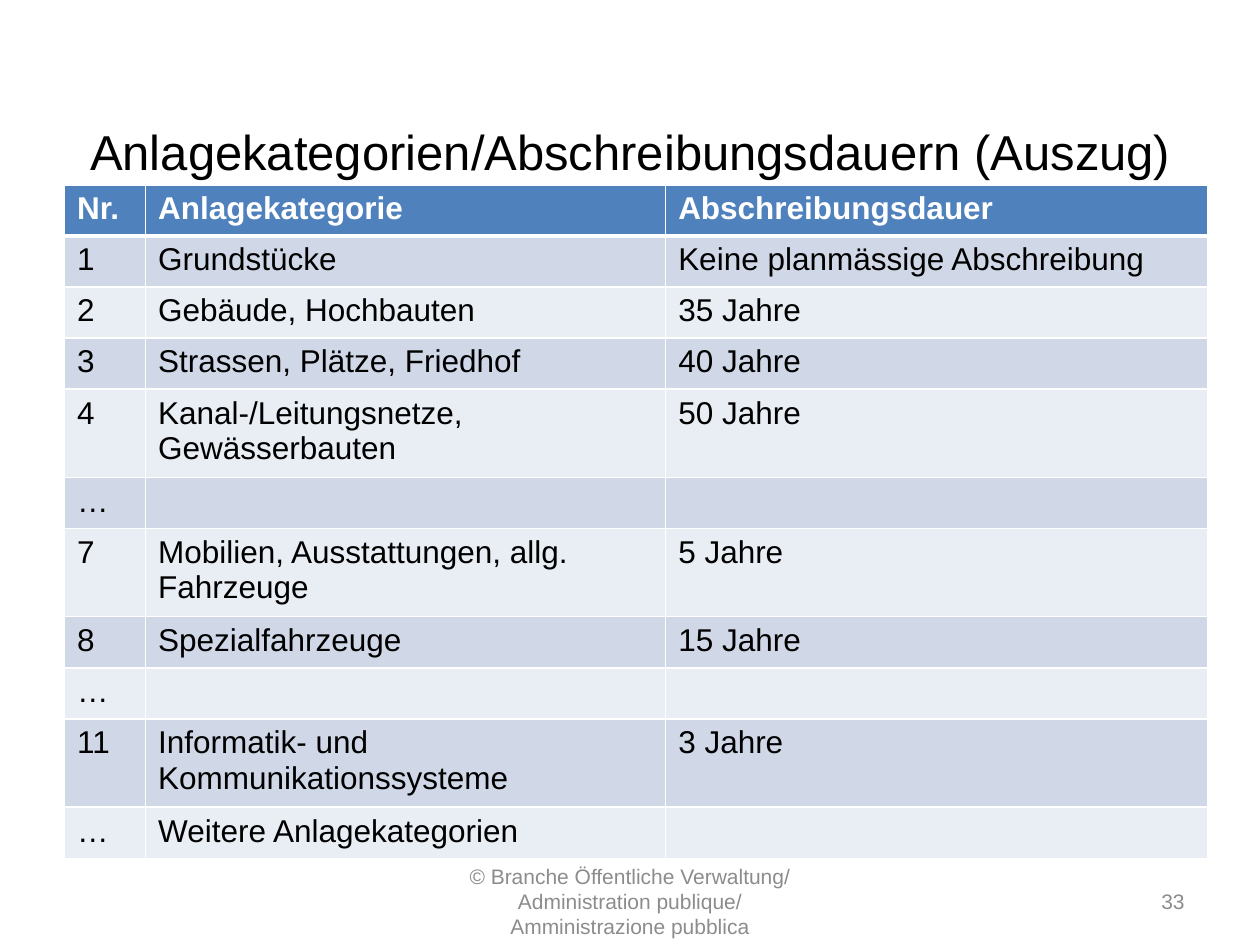
from pptx import Presentation
from pptx.dml.color import RGBColor
from pptx.enum.text import MSO_ANCHOR, PP_ALIGN
from pptx.oxml.ns import qn
from pptx.util import Pt
from lxml.etree import SubElement

FONT = "Arial"
BLACK = RGBColor(0x00, 0x00, 0x00)
WHITE = RGBColor(0xFF, 0xFF, 0xFF)
GREY = RGBColor(0x8C, 0x8C, 0x8C)
HEADER_BLUE = RGBColor(0x4F, 0x81, 0xBD)
BAND_DARK = RGBColor(0xD0, 0xD8, 0xE8)
BAND_LIGHT = RGBColor(0xE9, 0xED, 0xF4)

COLUMN_WIDTHS = [46.3, 297.2, 309.6]
ROW_HEIGHT = 29.2
ROWS = [
    ("Nr.", "Anlagekategorie", "Abschreibungsdauer"),
    ("1", "Grundstücke", "Keine planmässige Abschreibung"),
    ("2", "Gebäude, Hochbauten", "35 Jahre"),
    ("3", "Strassen, Plätze, Friedhof", "40 Jahre"),
    ("4", "Kanal-/Leitungsnetze, Gewässerbauten", "50 Jahre"),
    ("…", "", ""),
    ("7", "Mobilien, Ausstattungen, allg. Fahrzeuge", "5 Jahre"),
    ("8", "Spezialfahrzeuge", "15 Jahre"),
    ("…", "", ""),
    ("11", "Informatik- und Kommunikationssysteme", "3 Jahre"),
    ("…", "Weitere Anlagekategorien", ""),
]


def format_runs(paragraph, size, color, bold=False):
    for run in paragraph.runs:
        run.font.name = FONT
        run.font.size = Pt(size)
        run.font.bold = bold
        run.font.color.rgb = color


def add_text(slide, text, left, top, width, height, size, color, alignment):
    text_frame = slide.shapes.add_textbox(
        Pt(left), Pt(top), Pt(width), Pt(height)).text_frame
    text_frame.word_wrap = True
    text_frame.vertical_anchor = MSO_ANCHOR.MIDDLE
    text_frame.text = text
    paragraph = text_frame.paragraphs[0]
    paragraph.alignment = alignment
    format_runs(paragraph, size, color)


def set_borders(cell, top, bottom):
    """Draw white cell borders; call before the fill is set."""
    properties = cell._tc.get_or_add_tcPr()
    for side, width in (("L", 1), ("R", 1), ("T", top), ("B", bottom)):
        line = SubElement(properties, qn(f"a:ln{side}"), w=str(Pt(width)))
        fill = SubElement(line, qn("a:solidFill"))
        SubElement(fill, qn("a:srgbClr"), val=str(WHITE))


def add_category_table(slide, left, top):
    table = slide.shapes.add_table(
        len(ROWS), len(COLUMN_WIDTHS), Pt(left), Pt(top),
        Pt(sum(COLUMN_WIDTHS)), Pt(ROW_HEIGHT * len(ROWS))).table
    for column, width in zip(table.columns, COLUMN_WIDTHS):
        column.width = Pt(width)
    for row_index, texts in enumerate(ROWS):
        table.rows[row_index].height = Pt(ROW_HEIGHT)
        is_header = row_index == 0
        band = BAND_DARK if row_index % 2 else BAND_LIGHT
        for column_index, text in enumerate(texts):
            cell = table.cell(row_index, column_index)
            set_borders(cell, top=3 if row_index == 1 else 1,
                        bottom=3 if is_header else 1)
            cell.fill.solid()
            cell.fill.fore_color.rgb = HEADER_BLUE if is_header else band
            if text:
                cell.text_frame.text = text
                format_runs(cell.text_frame.paragraphs[0], 18,
                            WHITE if is_header else BLACK, is_header)


def main():
    presentation = Presentation()
    presentation.slide_width = Pt(720)
    presentation.slide_height = Pt(540)
    slide = presentation.slides.add_slide(presentation.slide_layouts[6])

    # Title
    add_text(slide, "Anlagekategorien/Abschreibungsdauern (Auszug)",
             36, 60.5, 648, 51, 28, BLACK, PP_ALIGN.CENTER)

    # Asset categories and depreciation periods
    add_category_table(slide, 36.9, 105.6)

    # Page number and footer
    add_text(slide, "33", 516, 500.5, 168, 28.75, 12, GREY, PP_ALIGN.RIGHT)
    add_text(slide, "© Branche Öffentliche Verwaltung/ Administration publique/ "
             "Amministrazione pubblica",
             246, 500.5, 228, 28.75, 12, GREY, PP_ALIGN.CENTER)

    presentation.save("out.pptx")


if __name__ == "__main__":
    main()
